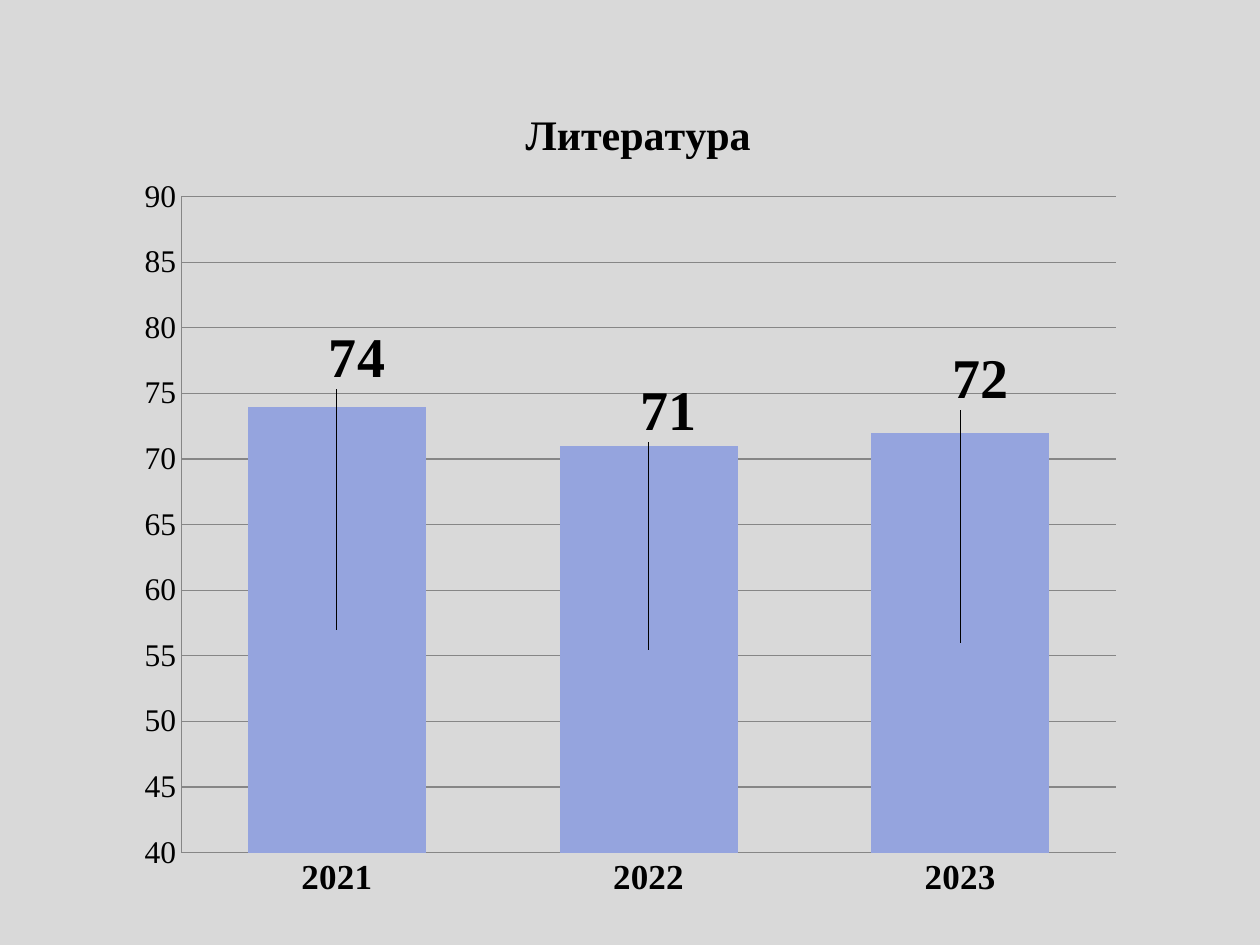
from typing import NamedTuple

from lxml import etree
from pptx import Presentation, util as u
from pptx.chart import data
from pptx.dml.color import RGBColor
from pptx.enum import chart as kinds
from pptx.oxml import ns

COLORS = {"background": "D9D9D9", "bar": "95A4DE", "line": "868686", "ink": "000000"}
FONT = "Times New Roman"
SUBJECT = "Литература"


class Result(NamedTuple):
    """A year's score and its label's shift as shares of the chart."""
    year: str
    score: int
    shift_x: float
    shift_y: float


RESULTS = [
    Result("2021", 74, 0.02, -0.32),
    Result("2022", 71, 0.02, -0.28),
    Result("2023", 72, 0.02, -0.31),
]


def rgb(name: str) -> RGBColor:
    return RGBColor.from_string(COLORS[name])


def style_font(font, size: int, bold: bool) -> None:
    for key, value in {"name": FONT, "size": u.Pt(size), "bold": bold}.items():
        setattr(font, key, value)
    font.color.rgb = rgb("ink")


def make_layout(**settings):
    layout = etree.Element(ns.qn("c:layout"))
    manual = etree.SubElement(layout, ns.qn("c:manualLayout"))
    for name, value in settings.items():
        etree.SubElement(manual, ns.qn(f"c:{name}")).set("val", str(value))
    return layout


def place(parent, layout, after: str | None = None) -> None:
    """Set a chart part's layout, first or right after the named child."""
    for old in parent.findall(ns.qn("c:layout")):
        parent.remove(old)
    if after is None:
        parent.insert(0, layout)
    else:
        parent.find(ns.qn(after)).addnext(layout)


def style_axis(axis, size: int, bold: bool) -> None:
    style_font(axis.tick_labels.font, size, bold)
    axis.major_tick_mark = axis.minor_tick_mark = kinds.XL_TICK_MARK.NONE
    axis.format.line.color.rgb = rgb("line")
    axis.format.line.width = u.Pt(0.75)


def add_title(chart) -> None:
    frame = chart.chart_title.text_frame
    frame.text = SUBJECT
    style_font(frame.paragraphs[0].runs[0].font, 24, True)
    chart.chart_title.include_in_layout = False
    edges = dict(xMode="edge", yMode="edge", x=0.39, y=0.04)
    place(chart.element.find(".//" + ns.qn("c:title")), make_layout(**edges), "c:tx")


def label_bars(chart, series) -> None:
    labels = series.data_labels
    labels.show_value = True
    style_font(labels.font, 32, True)
    for index in range(len(RESULTS)):
        style_font(series.points[index].data_label.font, 32, True)
    for result, label in zip(RESULTS, chart.element.iter(ns.qn("c:dLbl"))):
        place(label, make_layout(x=result.shift_x, y=result.shift_y), "c:idx")


def add_score_chart(deck, page) -> None:
    scores = data.CategoryChartData()
    scores.categories = [result.year for result in RESULTS]
    scores.add_series(SUBJECT, [result.score for result in RESULTS])
    width, height = deck.slide_width, deck.slide_height
    chart = page.shapes.add_chart(
        kinds.XL_CHART_TYPE.COLUMN_STACKED,
        int(width * 0.098), int(height * 0.07), int(width * 0.803), int(height * 0.897),
        scores).chart
    chart.has_legend = False
    style_font(chart.font, 18, False)
    add_title(chart)

    style_axis(chart.category_axis, 20, True)
    axis = chart.value_axis
    style_axis(axis, 18, False)
    limits = {"minimum_scale": 40, "maximum_scale": 90, "major_unit": 5,
              "has_major_gridlines": True}
    for key, value in limits.items():
        setattr(axis, key, value)
    axis.major_gridlines.format.line.color.rgb = rgb("line")
    axis.major_gridlines.format.line.width = u.Pt(0.75)

    plot = chart.plots[0]
    for key, value in {"gap_width": 75, "overlap": 100, "vary_by_categories": False}.items():
        setattr(plot, key, value)
    series = plot.series[0]
    series.invert_if_negative = False
    series.format.fill.solid()
    series.format.fill.fore_color.rgb = rgb("bar")
    label_bars(chart, series)

    inner = dict(layoutTarget="inner", xMode="edge", yMode="edge",
                 x=0.057, y=0.154, w=0.924, h=0.774)
    place(chart.element.find(".//" + ns.qn("c:plotArea")), make_layout(**inner))


def main() -> None:
    deck = Presentation()
    deck.slide_width, deck.slide_height = u.Inches(10), u.Inches(7.5)
    page = deck.slides.add_slide(deck.slide_layouts[6])
    page.background.fill.solid()
    page.background.fill.fore_color.rgb = rgb("background")
    add_score_chart(deck, page)
    deck.save("out.pptx")


if __name__ == "__main__":
    main()
